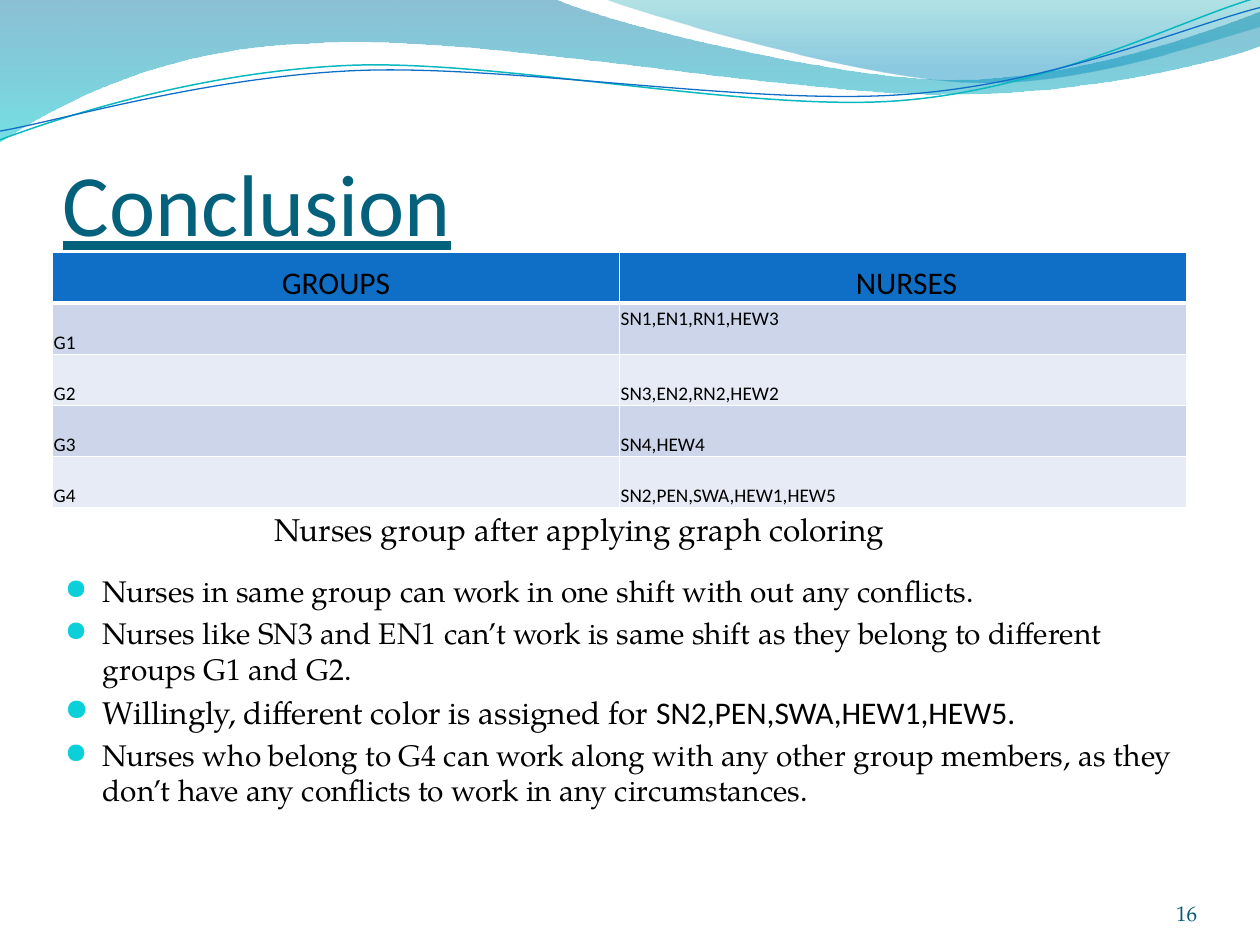
from lxml.etree import SubElement
from pptx import Presentation
from pptx.dml.color import RGBColor
from pptx.enum.text import MSO_ANCHOR, PP_ALIGN
from pptx.oxml.ns import qn
from pptx.util import Pt

BLACK = RGBColor(0x00, 0x00, 0x00)
WHITE = RGBColor(0xFF, 0xFF, 0xFF)
TITLE_TEAL = RGBColor(0x04, 0x61, 0x7B)
NUMBER_TEAL = RGBColor(0x04, 0x5D, 0x75)
BULLET_CYAN = RGBColor(0x0B, 0xD0, 0xD9)
BLUE = RGBColor(0x0F, 0x6F, 0xC6)
LINE_CYAN = RGBColor(0x0A, 0xB8, 0xBF)
BAND_DARK = RGBColor(0xCC, 0xD5, 0xEA)
BAND_LIGHT = RGBColor(0xE7, 0xEB, 0xF5)
WAVE_BLUE = RGBColor(0x00, 0x74, 0xA1)
WAVE_CYAN = RGBColor(0x00, 0xC6, 0xCF)
CREST_CYAN = RGBColor(0x00, 0xA1, 0xA9)
CREST_BLUE = RGBColor(0x00, 0x8B, 0xBF)

SANS = "Calibri"
SERIF = "TeX Gyre Pagella"

WAVE = [
    [(0, 0)],
    [(316.8, -0.7)],
    [(342.7, 12.2), (478.1, 45.4), (545.8, 45.4)],
    [(614.2, 45.4), (689.8, 18.7), (720, 6.5)],
    [(720.7, 25.9)],
    [(707.8, 31.7), (626.4, 54.7), (537.1, 54)],
    [(447.8, 54), (275, 20.2), (185, 24.5)],
    [(92.9, 25.9), (33.1, 59.8), (-0.7, 81.4)],
]
CREST = [
    [(344.9, -0.7)],
    [(366.5, 7.9), (491, 44.6), (553.7, 46.8)],
    [(616.3, 49.7), (691.9, 23), (720, 15.1)],
    [(720, 0)],
]
CYAN_STRAND = [
    [(0, 79.9)],
    [(34.6, 67), (113.8, 41), (199.4, 37.4)],
    [(284.4, 33.8), (427, 64.1), (513.4, 57.6)],
    [(599.8, 51.1), (675.4, 10.8), (718.6, -1.4)],
]
BLUE_STRAND = [
    [(0, 74.9)],
    [(33.8, 69.1), (118.1, 43.9), (203.8, 40.3)],
    [(290.2, 36.7), (429.8, 60.5), (516.2, 54)],
    [(601.9, 48.2), (677.5, 15.1), (720, 4.3)],
]

GROUPS = [
    ("GROUPS", " NURSES"),
    ("G1", "SN1,EN1,RN1,HEW3"),
    ("G2", "SN3,EN2,RN2,HEW2"),
    ("G3", "SN4,HEW4"),
    ("G4", "SN2,PEN,SWA,HEW1,HEW5"),
]
FINDINGS = [
    [("Nurses in same group can work in one shift with out any conflicts.", 17, SERIF)],
    [("Nurses like SN3 and EN1 can’t work is same shift as they belong to different "
      "groups G1 and G2.", 17, SERIF)],
    [("Willingly, different color is assigned for ", 18, SERIF),
     ("SN2,PEN,SWA,HEW1,HEW5.", 18, SANS)],
    [("Nurses who belong to G4 can work along with any other group members, as they "
      "don’t have any conflicts to work in any circumstances.", 17, SERIF)],
]


class Painter:
    def __init__(self, page):
        self.page = page

    def outline(self, segments, close):
        points = [(Pt(x), Pt(y)) for x, y in (segment[-1] for segment in segments)]
        builder = self.page.shapes.build_freeform(*points[0], scale=1.0)
        builder.add_line_segments(points[1:], close=close)
        shape = builder.convert_to_shape()
        shape.shadow.inherit = False
        lines = list(shape._element.spPr.iter(qn("a:lnTo")))
        for line, segment in zip(lines, segments[1:]):
            if len(segment) == 3:
                self.bend(line, segment, shape)
        return shape

    def bend(self, line, segment, shape):
        curve = line.makeelement(qn("a:cubicBezTo"), {})
        for x, y in segment:
            point = SubElement(curve, qn("a:pt"))
            point.set("x", str(Pt(x) - shape.left))
            point.set("y", str(Pt(y) - shape.top))
        line.getparent().replace(line, curve)

    def wave(self, segments, stops):
        shape = self.outline(segments, True)
        shape.line.fill.background()
        shape.fill.gradient()
        shape.fill.gradient_angle = 270
        for stop, (position, color, opacity) in zip(shape.fill.gradient_stops, stops):
            stop.position = position
            stop.color.rgb = color
        for node, stop in zip(shape._element.spPr.iter(qn("a:srgbClr")), stops):
            SubElement(node, qn("a:alpha")).set("val", str(stop[2] * 1000))

    def strand(self, segments, color, width):
        shape = self.outline(segments, False)
        shape.fill.background()
        shape.line.color.rgb = color
        shape.line.width = Pt(width)

    def span(self, para, text, size, font, color=BLACK, underline=None):
        span = para.add_run()
        span.text = text
        span.font.size = Pt(size)
        span.font.name = font
        span.font.color.rgb = color
        span.font.underline = underline

    def box(self, left, top, width, height, insets=(7.2, 3.6, 7.2, 3.6),
            anchor=MSO_ANCHOR.TOP):
        box = self.page.shapes.add_textbox(Pt(left), Pt(top), Pt(width), Pt(height))
        frame = box.text_frame
        frame.word_wrap = True
        frame.vertical_anchor = anchor
        frame.margin_left, frame.margin_top, frame.margin_right, frame.margin_bottom = (
            Pt(inset) for inset in insets)
        return frame

    def bullet(self, para):
        para.space_before = Pt(3.5)
        props = para._p.get_or_add_pPr()
        props.set("marL", str(Pt(21.6)))
        props.set("indent", str(-Pt(21.6)))
        color = SubElement(props, qn("a:buClr"))
        SubElement(color, qn("a:srgbClr")).set("val", str(BULLET_CYAN))
        SubElement(props, qn("a:buSzPct")).set("val", "95000")
        SubElement(props, qn("a:buFont")).set("typeface", "OpenSymbol")
        SubElement(props, qn("a:buChar")).set("char", "●")

    def bullets(self, frame, items):
        for index, spans in enumerate(items):
            para = frame.add_paragraph() if index else frame.paragraphs[0]
            self.bullet(para)
            for span in spans:
                self.span(para, *span)

    def borders(self, cell, bottom):
        props = cell._tc.get_or_add_tcPr()
        for index, (side, width) in enumerate(
                (("lnL", 1), ("lnR", 1), ("lnT", 1), ("lnB", bottom))):
            line = props.makeelement(qn(f"a:{side}"), {"w": str(Pt(width))})
            props.insert(index, line)
            fill = SubElement(line, qn("a:solidFill"))
            SubElement(fill, qn("a:srgbClr")).set("val", str(WHITE))

    def table(self, left, top, width, row_height, rows):
        table = self.page.shapes.add_table(
            len(rows), len(rows[0]), Pt(left), Pt(top), Pt(width),
            Pt(row_height * len(rows))).table
        for r, texts in enumerate(rows):
            table.rows[r].height = Pt(row_height)
            for c, text in enumerate(texts):
                cell = table.cell(r, c)
                raised = (r, c) == (1, 1)
                cell.margin_left = cell.margin_right = Pt(0.7)
                cell.margin_top = Pt(2.4 if raised else 0.7)
                cell.margin_bottom = 0
                cell.vertical_anchor = MSO_ANCHOR.TOP if raised else MSO_ANCHOR.BOTTOM
                cell.fill.solid()
                cell.fill.fore_color.rgb = (
                    BLUE if r == 0 else BAND_DARK if r % 2 else BAND_LIGHT)
                self.borders(cell, 1 if r else 3)
                para = cell.text_frame.paragraphs[0]
                para.alignment = PP_ALIGN.LEFT if r else PP_ALIGN.CENTER
                self.span(para, text, 11 if r else 18, SANS)


def main():
    deck = Presentation()
    deck.slide_width, deck.slide_height = Pt(720), Pt(540)
    painter = Painter(deck.slides.add_slide(deck.slide_layouts[6]))

    painter.wave(WAVE, [(0, WAVE_BLUE, 45), (1, WAVE_CYAN, 55)])
    painter.wave(CREST, [(0, CREST_CYAN, 30), (0.8, CREST_BLUE, 45)])
    painter.strand(CYAN_STRAND, LINE_CYAN, 0.85)
    painter.strand(BLUE_STRAND, BLUE, 0.75)

    title = painter.box(36, 55.4, 648, 90, (0, 3.6, 0, 0), MSO_ANCHOR.BOTTOM)
    painter.span(title.paragraphs[0], "Conclusion", 50, SANS, TITLE_TEAL, True)

    painter.table(30, 144, 648, 29.25, GROUPS)

    number = painter.box(624, 500.4, 60, 28.8, (0, 0, 0, 0), MSO_ANCHOR.BOTTOM)
    number.paragraphs[0].alignment = PP_ALIGN.RIGHT
    painter.span(number.paragraphs[0], "16", 12, SERIF, NUMBER_TEAL)

    painter.bullets(painter.box(30, 324, 648, 192), FINDINGS)
    caption = painter.box(150, 288, 456, 28.8)
    painter.span(caption.paragraphs[0], "Nurses group after applying graph coloring", 18, SERIF)

    deck.save("out.pptx")


if __name__ == "__main__":
    main()
